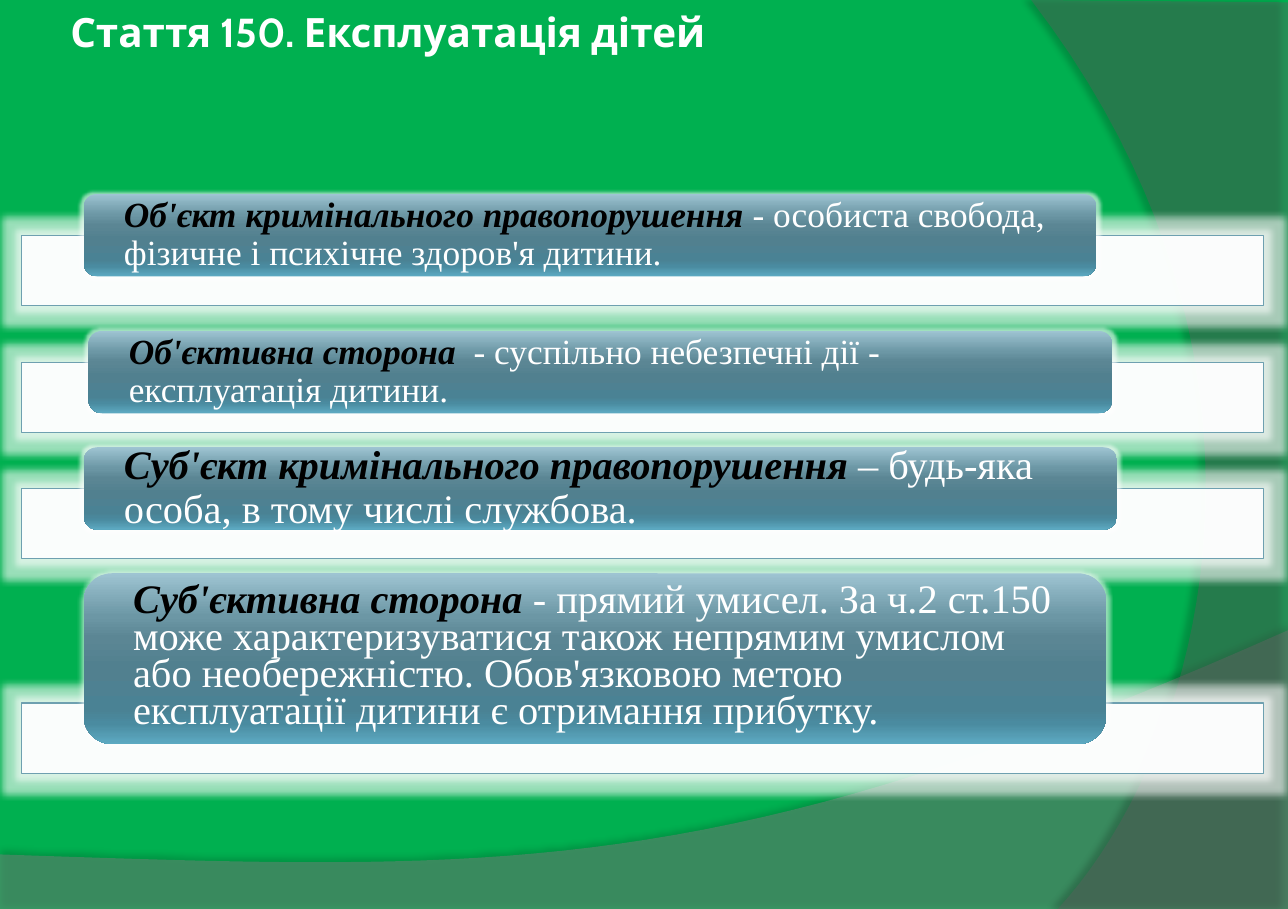
from lxml.etree import SubElement
from pptx import Presentation
from pptx.dml.color import RGBColor
from pptx.enum.shapes import MSO_SHAPE
from pptx.enum.text import MSO_ANCHOR, MSO_AUTO_SIZE, PP_ALIGN
from pptx.oxml.ns import qn
from pptx.util import Inches, Pt

GREEN = RGBColor(0x00, 0xB0, 0x50)
WHITE = RGBColor(0xFF, 0xFF, 0xFF)
BLACK = RGBColor(0x00, 0x00, 0x00)
GRAY = RGBColor(0x7F, 0x7F, 0x7F)
DARK_GRAY = RGBColor(0x5E, 0x5E, 0x5E)
BLUE_GRAY = RGBColor(0x6E, 0xA0, 0xB0)
CARD_STOPS = [
    (0, RGBColor(0x9E, 0xC4, 0xD2)), (25, RGBColor(0x6C, 0x97, 0xA5)),
    (38, RGBColor(0x5B, 0x86, 0x94)), (55, RGBColor(0x51, 0x80, 0x8F)),
    (80, RGBColor(0x4A, 0x82, 0x94)), (88, RGBColor(0x4A, 0x8B, 0xA0)),
    (100, RGBColor(0x5D, 0xAA, 0xC2)),
]


def add_run(p, text, font="Times New Roman", size=21, color=WHITE, bold=False, italic=False):
    r = p.add_run()
    r.text = text
    r.font.name = font
    r.font.size = Pt(size)
    r.font.color.rgb = color
    r.font.bold = bold
    r.font.italic = italic


def add_color(parent, color, alpha=100):
    clr = SubElement(parent, qn("a:srgbClr"), val=str(color))
    if alpha < 100:
        SubElement(clr, qn("a:alpha"), val=str(alpha * 1000))


def add_effect(sp, kind, color, alpha, **attrs):
    sp.shadow.inherit = False
    effects = sp._element.spPr.find(qn("a:effectLst"))
    values = {key: str(value) for key, value in attrs.items()}
    add_color(SubElement(effects, qn("a:" + kind), **values), color, alpha)


def set_solid(sp, color, alpha):
    sp.fill.solid()
    sp.fill.fore_color.rgb = color
    clr = sp._element.spPr.find(qn("a:solidFill"))[0]
    SubElement(clr, qn("a:alpha"), val=str(alpha * 1000))


def curve(points, steps=40):
    result = []
    for i in range(1, steps + 1):
        t = i / steps
        weights = ((1 - t) ** 3, 3 * t * (1 - t) ** 2, 3 * t ** 2 * (1 - t), t ** 3)
        result.append(tuple(sum(w * pt[axis] for w, pt in zip(weights, points))
                            for axis in (0, 1)))
    return result


class ArticleSlide:
    def __init__(self, prs):
        self.s = prs.slides.add_slide(prs.slide_layouts[5])
        self.s.background.fill.solid()
        self.s.background.fill.fore_color.rgb = GREEN

    def title(self, text):
        sp = self.s.shapes.title
        sp.left, sp.top, sp.width, sp.height = map(Inches, (0.53, 0, 8.68, 0.51))
        tf = sp.text_frame
        tf.auto_size = MSO_AUTO_SIZE.NONE
        tf.vertical_anchor = MSO_ANCHOR.MIDDLE
        tf.margin_left = tf.margin_right = tf.margin_top = tf.margin_bottom = Inches(0.05)
        p = tf.paragraphs[0]
        p.alignment = PP_ALIGN.LEFT
        add_run(p, text, font="Cabin", size=24, bold=True)

    def wave(self, points, color, alpha, shadow_alpha, distance, angle):
        start, *rest = [(Inches(x), Inches(y)) for x, y in points]
        builder = self.s.shapes.build_freeform(*start)
        builder.add_line_segments(rest, close=True)
        sp = builder.convert_to_shape()
        set_solid(sp, color, alpha)
        sp.line.fill.background()
        add_effect(sp, "outerShdw", BLACK, shadow_alpha, blurRad=Pt(4),
                   dist=Pt(distance), dir=angle * 60000)

    def bar(self, top):
        sp = self.s.shapes.add_shape(MSO_SHAPE.RECTANGLE, Inches(0.18), Inches(top),
                                     Inches(10.25), Inches(0.58))
        set_solid(sp, WHITE, 90)
        sp.line.color.rgb = BLUE_GRAY
        sp.line.width = Pt(0.75)
        add_effect(sp, "glow", WHITE, 60, rad=Pt(8))

    def card(self, box, term, text, size, spacing, inset):
        sp = self.s.shapes.add_shape(MSO_SHAPE.ROUNDED_RECTANGLE, *map(Inches, box))
        sp.fill.gradient()
        sp.fill.gradient_angle = 270
        stops = sp._element.spPr.find(qn("a:gradFill")).find(qn("a:gsLst"))
        for stop in list(stops):
            stops.remove(stop)
        for position, color in CARD_STOPS:
            add_color(SubElement(stops, qn("a:gs"), pos=str(position * 1000)), color)
        sp.line.fill.background()
        add_effect(sp, "glow", WHITE, 60, rad=Pt(4))
        tf = sp.text_frame
        tf.word_wrap = True
        tf.vertical_anchor = MSO_ANCHOR.MIDDLE
        tf.margin_left = tf.margin_right = Inches(inset)
        tf.margin_top = tf.margin_bottom = 0
        p = tf.paragraphs[0]
        p.alignment = PP_ALIGN.LEFT
        p.line_spacing = spacing
        add_run(p, term, size=size, color=BLACK, bold=True, italic=True)
        add_run(p, text, size=size)


def main():
    prs = Presentation()
    prs.slide_width, prs.slide_height = Inches(10.63), Inches(7.5)
    article = ArticleSlide(prs)
    article.wave([(0, 7.05), (0, 7.51), (10.63, 7.51), (10.63, 5.2)]
                 + curve([(10.63, 5.2), (5.94, 7.29), (4.15, 7.19), (0, 7.05)]),
                 GRAY, 45, 35, 3.5, 270)
    article.wave([(10.63, 0.02), (10.63, 7.5), (8.73, 7.5)]
                 + curve([(8.73, 7.5), (9.94, 6.19), (10.82, 3), (8.51, 0)]),
                 DARK_GRAY, 40, 45, 4, 180)
    article.title("Стаття 150. Експлуатація дітей")
    elements = [
        (1.94, (0.69, 1.6, 8.36, 0.68), "Об'єкт кримінального правопорушення ",
         "- особиста свобода, фізичне і психічне здоров'я дитини.", 21, 0.9, 0.3),
        (2.99, (0.73, 2.73, 8.45, 0.68), "Об'єктивна сторона  ",
         "- суспільно небезпечні дії - експлуатація дитини.", 21, 0.9, 0.3),
        (4.03, (0.69, 3.69, 8.53, 0.68), "Суб'єкт кримінального правопорушення ",
         "– будь-яка особа, в тому числі службова.", 24, 0.9, 0.3),
        (5.8, (0.69, 4.73, 8.44, 1.41), "Суб'єктивна сторона ",
         "- прямий умисел. За ч.2 ст.150 може характеризуватися також непрямим умислом "
         "або необережністю. Обов'язковою метою експлуатації дитини є отримання прибутку.",
         24, Pt(22), 0.34),
    ]
    for bar_top, *card in elements:
        article.bar(bar_top)
        article.card(*card)
    prs.save("out.pptx")


if __name__ == "__main__":
    main()
